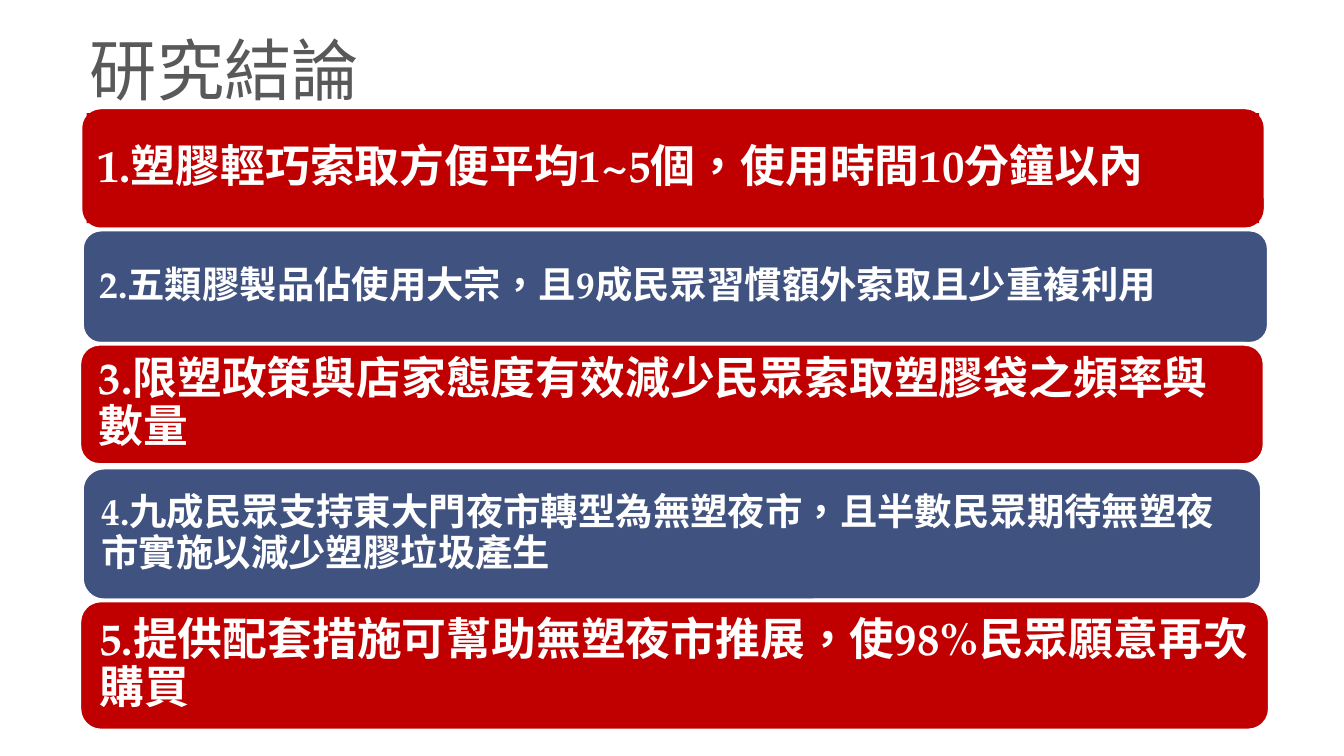
from dataclasses import dataclass

from lxml import etree
from pptx import Presentation
from pptx import util as u
from pptx.dml.color import RGBColor
from pptx.enum import lang, shapes, text
from pptx.oxml.ns import qn


@dataclass(frozen=True)
class Theme:
    red: str = "C00000"
    blue: str = "405280"
    white: str = "FFFFFF"
    gray: str = "595959"
    latin: str = "TeX Gyre Pagella"
    cjk: str = "Noto Sans CJK SC"
    title_size: int = 36
    strong_size: int = 24
    normal_size: int = 20
    line_width: int = 2


class Deck:
    def __init__(self, theme):
        self.theme = theme
        self.prs = Presentation()
        self.prs.slide_width, self.prs.slide_height = u.Cm(25.4), u.Cm(14.29)
        self.s = self.prs.slides.add_slide(self.prs.slide_layouts[6])

    def label(self, box, content, size, color, font, insets, bold=False, spacing=1.0):
        sp = self.s.shapes.add_textbox(*map(u.Cm, box))
        tf = sp.text_frame
        tf.word_wrap = True
        tf.vertical_anchor = text.MSO_ANCHOR.MIDDLE
        tf.margin_left = tf.margin_right = u.Cm(insets[0])
        tf.margin_top = tf.margin_bottom = u.Cm(insets[1])
        tf.text = content
        p = tf.paragraphs[0]
        p.line_spacing = spacing
        r = p.runs[0]
        r.font.size, r.font.bold, r.font.name = u.Pt(size), bold, font
        r.font.color.rgb = RGBColor.from_string(color)
        r.font.language_id = lang.MSO_LANGUAGE_ID.TRADITIONAL_CHINESE
        ea = etree.Element(qn("a:ea"), typeface=self.theme.cjk)
        r.font._element.find(qn("a:latin")).addnext(ea)
        return sp

    def title(self, box, content):
        t = self.theme
        self.label(box, content, t.title_size, t.gray, t.cjk, (0, 0.13))

    def band(self, box, side, content, strong):
        t = self.theme
        color = RGBColor.from_string(t.red if strong else t.blue)
        sp = self.s.shapes.add_shape(
            shapes.MSO_SHAPE.ROUNDED_RECTANGLE, *map(u.Cm, box))
        sp.shadow.inherit = False
        sp.fill.solid()
        sp.fill.fore_color.rgb = color
        sp.line.color.rgb = RGBColor.from_string(t.white)
        sp.line.width = u.Pt(t.line_width)

        x, y, w, h = box
        inner = (x + side, y + 0.11, w - 2 * side, h - 0.23)
        size = t.strong_size if strong else t.normal_size
        sp = self.label(inner, content, size, t.white, t.latin, (0.2, 0.2), True, 0.9)
        if strong:
            sp.fill.solid()
            sp.fill.fore_color.rgb = color


CONCLUSIONS = [
    ((1.52, 2.03, 22.4, 2.31), 0.12, "塑膠輕巧索取方便平均1~5個，使用時間10分鐘以內"),
    ((1.55, 4.34, 22.43, 2.16), 0.13, "五類膠製品佔使用大宗，且9成民眾習慣額外索取且少重複利用"),
    ((1.5, 6.5, 22.4, 2.29), 0.17, "限塑政策與店家態度有效減少民眾索取塑膠袋之頻率與數量"),
    ((1.55, 8.84, 22.3, 2.51), 0.17,
     "九成民眾支持東大門夜市轉型為無塑夜市，且半數民眾期待無塑夜市實施以減少塑膠垃圾產生"),
    ((1.5, 11.35, 22.5, 2.46), 0.18, "提供配套措施可幫助無塑夜市推展，使98%民眾願意再次購買"),
]


def main():
    deck = Deck(Theme())
    deck.title((1.7, 0.48, 6.81, 1.65), "研究結論")
    for number, (box, side, content) in enumerate(CONCLUSIONS, 1):
        deck.band(box, side, f"{number}.{content}", strong=number % 2 == 1)
    deck.prs.save("out.pptx")


if __name__ == "__main__":
    main()
